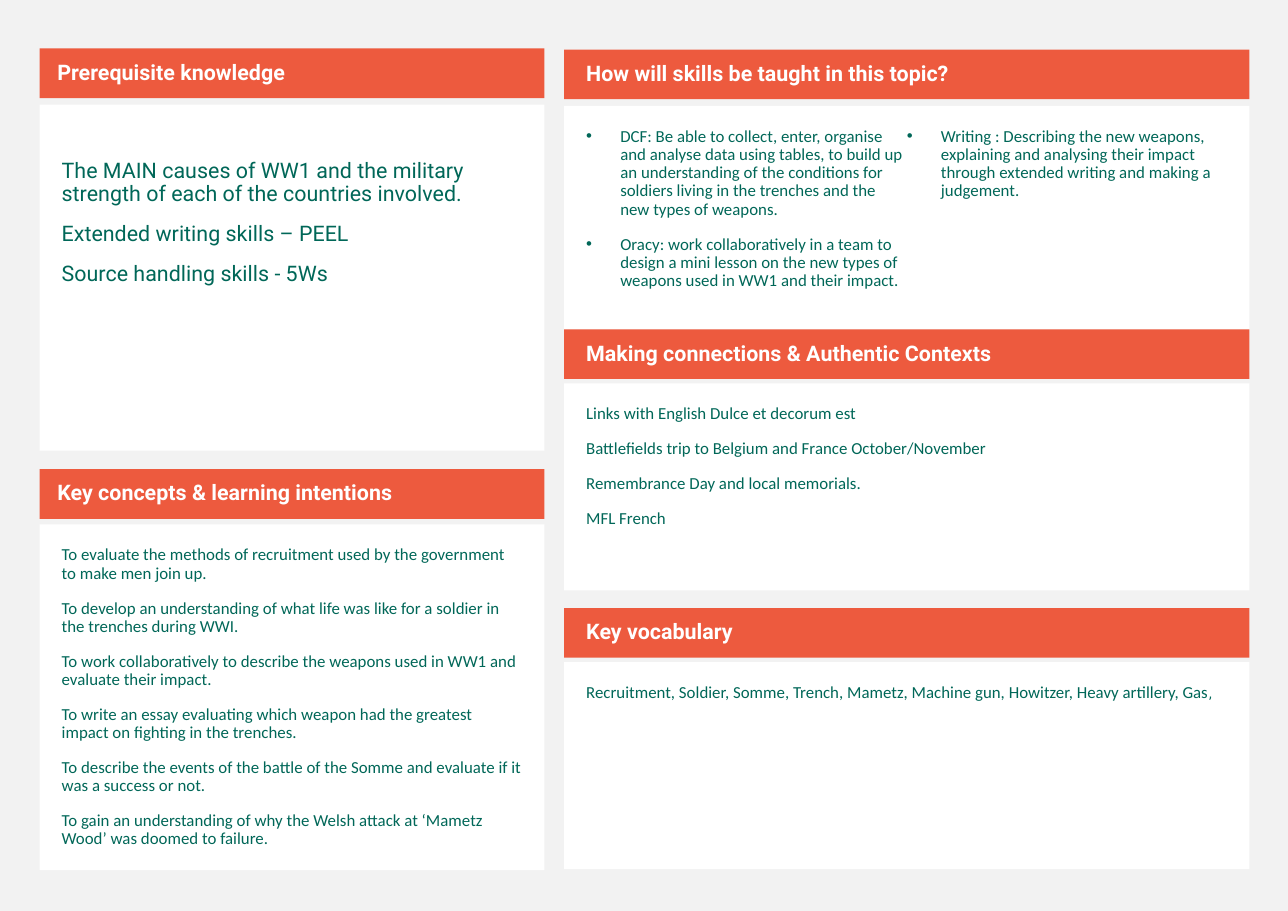
from lxml import etree
from pptx import Presentation
from pptx import util as u
from pptx.dml.color import RGBColor
from pptx.enum import shapes, text
from pptx.oxml.ns import qn

WIDTH, HEIGHT = 11.69, 8.27
ORANGE, GREEN, WHITE, GREY = "ED5A3E", "006758", "FFFFFF", "F2F2F2"
# Columns are (left, width) in percent of the slide width
LEFT_COLUMN = (3.08, 39.18)
RIGHT_COLUMN = (43.8, 53.21)
HEADER_HEIGHT = 5.44  # percent of the slide height
PAD = 0.2

PREREQUISITES = [
    "The MAIN causes of WW1 and the military strength of each of the countries involved.",
    "Extended writing skills – PEEL",
    "Source handling skills - 5Ws",
]
INTENTIONS = [
    "To evaluate the methods of recruitment used by the government to make men join up.",
    "To develop an understanding of what life was like for a soldier in the trenches during WWI.",
    "To work collaboratively to describe the weapons used in WW1 and evaluate their impact.",
    "To write an essay evaluating which weapon had the greatest impact on fighting in the trenches.",
    "To describe the events of the battle of the Somme and evaluate if it was a success or not.",
    "To gain an understanding of why the Welsh attack at ‘Mametz Wood’ was doomed to failure.",
]
SKILLS = [
    "DCF: Be able to collect, enter, organise and analyse data using tables, to build up an "
    "understanding of the conditions for soldiers living in the trenches and the new types of weapons.",
    "Oracy: work collaboratively in a team to design a mini lesson on the new types of weapons "
    "used in WW1 and their impact.",
    "Writing : Describing the new weapons, explaining and analysing their impact through "
    "extended writing and making a judgement.",
]
CONNECTIONS = [
    "Links with English Dulce et decorum est",
    "Battlefields trip to Belgium and France October/November",
    "Remembrance Day and local memorials.",
    "MFL French",
]
VOCABULARY = [
    "Recruitment, Soldier, Somme, Trench, Mametz, Machine gun, Howitzer, Heavy artillery, Gas",
]


def colour(value):
    return RGBColor.from_string(value)


def add_box(slide, column, top, height, fill, insets):
    """Add a plain rectangle; insets are left, top, right, bottom in inches."""
    left, width = column
    box = slide.shapes.add_shape(
        shapes.MSO_SHAPE.RECTANGLE,
        u.Inches(WIDTH * left / 100), u.Inches(HEIGHT * top / 100),
        u.Inches(WIDTH * width / 100), u.Inches(HEIGHT * height / 100))
    box.shadow.inherit = False
    box.fill.solid()
    box.fill.fore_color.rgb = colour(fill)
    box.line.fill.background()
    frame = box.text_frame
    frame.word_wrap = True
    (frame.margin_left, frame.margin_top,
     frame.margin_right, frame.margin_bottom) = map(u.Inches, insets)
    frame.vertical_anchor = text.MSO_ANCHOR.TOP
    return frame


def write(frame, lines, size, font, ink, bold=False):
    for index, line in enumerate(lines):
        para = frame.paragraphs[0] if index == 0 else frame.add_paragraph()
        para.text = line
        para.alignment = text.PP_ALIGN.LEFT
        para.line_spacing = 0.9
        para.space_before = u.Pt(11)
        para.font.size = u.Pt(size)
        para.font.name = font
        para.font.bold = bold
        para.font.color.rgb = colour(ink)


def add_header(slide, column, top, title, indent):
    frame = add_box(slide, column, top, HEADER_HEIGHT, ORANGE, (indent, 0.05, 0.1, 0.05))
    frame.vertical_anchor = text.MSO_ANCHOR.MIDDLE
    write(frame, [title], 14, "Roboto", WHITE, bold=True)


def add_panel(slide, column, top, height, lines, size=11, font="Calibri", top_inset=PAD):
    frame = add_box(slide, column, top, height, WHITE, (PAD, top_inset, PAD, PAD))
    write(frame, lines, size, font, GREEN)
    return frame


def add_bullets(frame):
    for para in frame.paragraphs:
        properties = para._p.get_or_add_pPr()
        properties.set("marL", str(u.Inches(0.31)))
        properties.set("indent", str(-u.Inches(0.31)))
        etree.SubElement(properties, qn("a:buFont")).set("typeface", "Arial")
        etree.SubElement(properties, qn("a:buChar")).set("char", "•")
        # Paragraph defaults come after the bullet in the schema
        properties.append(properties.find(qn("a:defRPr")))


def split_columns(frame, count):
    frame._txBody.bodyPr.set("numCol", str(count))
    # The wide gap pushes the last item into the next column
    frame.paragraphs[-1].space_before = u.Pt(34)


def main():
    deck = Presentation()
    deck.slide_width, deck.slide_height = u.Inches(WIDTH), u.Inches(HEIGHT)
    slide = deck.slides.add_slide(deck.slide_layouts[6])
    slide.background.fill.solid()
    slide.background.fill.fore_color.rgb = colour(GREY)

    add_panel(slide, LEFT_COLUMN, 11.49, 37.97, PREREQUISITES, 14, "Roboto", top_inset=0.5)
    add_panel(slide, LEFT_COLUMN, 57.56, 37.97, INTENTIONS)
    skills = add_panel(slide, RIGHT_COLUMN, 11.61, 24.55, SKILLS)
    add_bullets(skills)
    split_columns(skills, 2)
    add_panel(slide, RIGHT_COLUMN, 42.08, 22.73, CONNECTIONS)
    vocabulary = add_panel(slide, RIGHT_COLUMN, 72.67, 22.73, VOCABULARY)
    comma = vocabulary.paragraphs[0].add_run()
    comma.text = ","
    comma.font.size = u.Pt(9)
    comma.font.name = "Roboto"

    for column, top, title, indent in (
        (LEFT_COLUMN, 5.32, "Prerequisite knowledge", 0.16),
        (LEFT_COLUMN, 51.51, "Key concepts & learning intentions", 0.16),
        (RIGHT_COLUMN, 5.44, "How will skills be taught in this topic?", PAD),
        (RIGHT_COLUMN, 36.15, "Making connections & Authentic Contexts", PAD),
        (RIGHT_COLUMN, 66.75, "Key vocabulary", PAD),
    ):
        add_header(slide, column, top, title, indent)

    deck.save("out.pptx")


if __name__ == "__main__":
    main()
